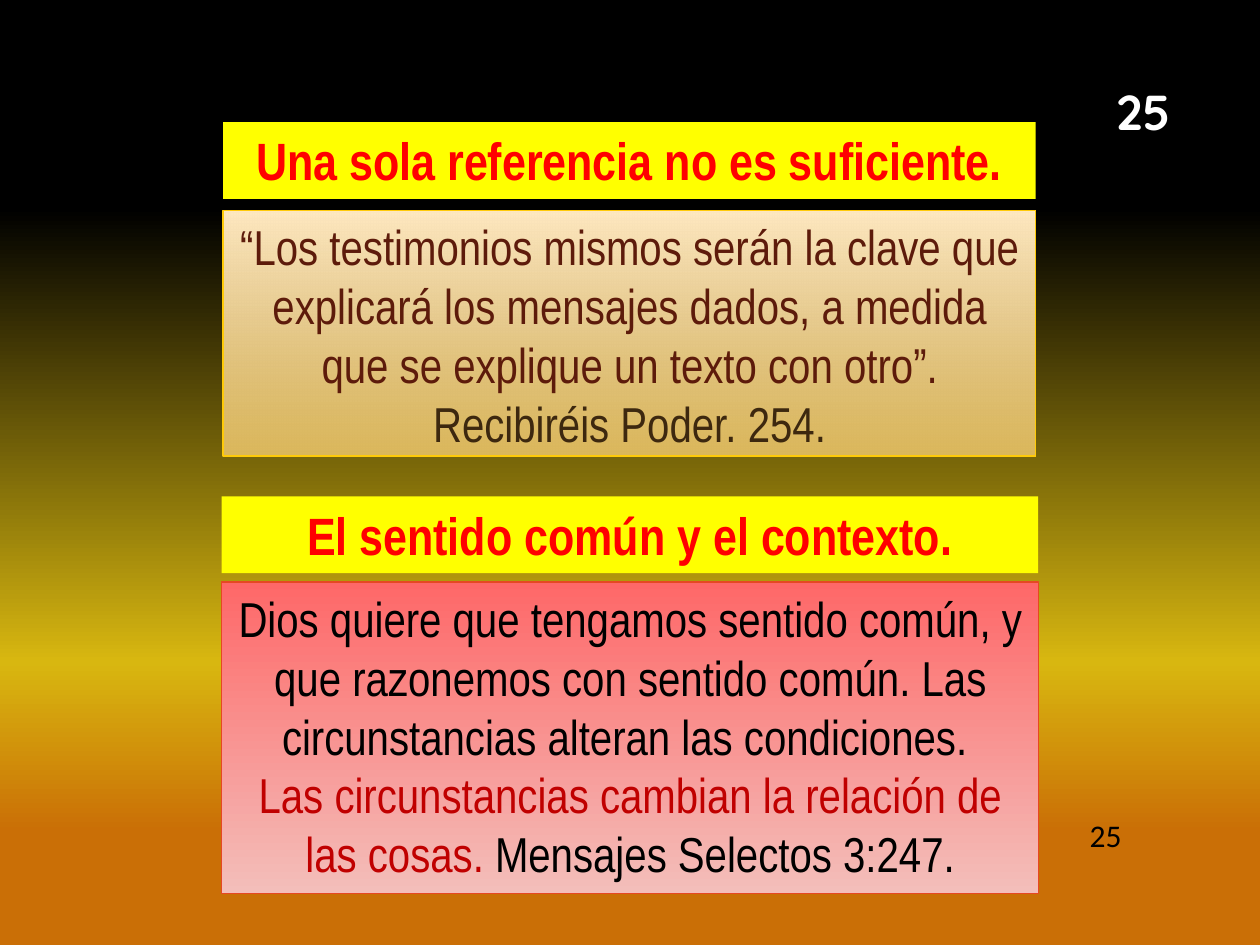
from pptx import Presentation
from pptx.dml.color import RGBColor
from pptx.enum.shapes import MSO_SHAPE
from pptx.enum.text import MSO_ANCHOR, PP_ALIGN
from pptx.oxml.ns import qn
from pptx.util import Inches, Pt
from lxml.etree import SubElement

COLORS = {
    "black": "000000", "white": "FFFFFF", "yellow": "FFFF00", "red": "FF0000",
    "dark_red": "C00000", "brown": "5D1B0B", "umber": "3D280F",
    "gold": "D8B710", "orange": "CA6F06", "cream": "FFE9C0", "sand": "FFD579",
    "sand_line": "FFCA08", "coral": "FE6868", "rose": "F3BEBA", "coral_line": "E64823",
}
NARROW = "Arial Narrow"
HEADING_ROWS = 8.13

presentation = Presentation()
presentation.slide_width, presentation.slide_height = Inches(10), Inches(7.5)
# Grid of 100 columns by 100 rows
COLUMN = presentation.slide_width / 100
ROW = presentation.slide_height / 100


def rgb(name):
    return RGBColor.from_string(COLORS[name])


def add_color(parent, name, alpha=100):
    color = SubElement(parent, qn("a:srgbClr"), val=COLORS[name])
    if alpha < 100:
        SubElement(color, qn("a:alpha"), val=str(alpha * 1000))


def fill_gradient(fill, owner, stops):
    """Fill from top to bottom; each stop is position, colour and optional opacity."""
    fill.gradient()
    fill.gradient_angle = 270
    stop_list = next(owner.iter(qn("a:gsLst")))
    for old_stop in list(stop_list):
        stop_list.remove(old_stop)
    for position, *color in stops:
        add_color(SubElement(stop_list, qn("a:gs"), pos=str(position * 1000)), *color)


def add_box(slide, box, fill=None, line=None):
    left, top, width, height = box
    shape = slide.shapes.add_shape(
        MSO_SHAPE.RECTANGLE, round(left * COLUMN), round(top * ROW),
        round(width * COLUMN), round(height * ROW))
    shape.shadow.inherit = False
    if isinstance(fill, list):
        fill_gradient(shape.fill, shape.element, fill)
    elif fill:
        shape.fill.solid()
        shape.fill.fore_color.rgb = rgb(fill)
    else:
        shape.fill.background()
    if line:
        shape.line.color.rgb = rgb(line)
        shape.line.width = Pt(0.75)
    else:
        shape.line.fill.background()
    return shape


def write(shape, paragraphs, size, font=NARROW, bold=False, outline=None,
          align=PP_ALIGN.CENTER, anchor=MSO_ANCHOR.TOP):
    """Each paragraph is a list of (text, colour); outline is (width, colour or None)."""
    frame = shape.text_frame
    frame.word_wrap = True
    frame.vertical_anchor = anchor
    for index, runs in enumerate(paragraphs):
        paragraph = frame.add_paragraph() if index else frame.paragraphs[0]
        paragraph.alignment = align
        for text, color in runs:
            run = paragraph.add_run()
            run.text = text
            run.font.size, run.font.name, run.font.bold = Pt(size), font, bold
            run.font.color.rgb = rgb(color)
            if outline:
                width, outline_color = outline
                properties = run.font._element
                line = SubElement(properties, qn("a:ln"), w=str(Pt(width)))
                add_color(SubElement(line, qn("a:solidFill")), outline_color or color)
                properties.insert(0, line)


def add_section(slide, box, gap, heading, paragraphs, fill, line):
    """A yellow heading bar with a quotation panel under it."""
    left, top, width, height = box
    bar = add_box(slide, (left, top, width, HEADING_ROWS), "yellow")
    write(bar, [[(heading, "red")]], 30, bold=True, outline=(0.25, "dark_red"))
    offset = HEADING_ROWS + gap
    panel = add_box(slide, (left, top + offset, width, height - offset), fill, line)
    write(panel, paragraphs, 28, outline=(1.5, None))


def add_numbers(slide, number):
    """The small number at the foot and the large one in the top corner."""
    write(add_box(slide, (85.4, 85.6, 4.6, 5.47)), [[(number, "black")]], 18,
          font="Calibri", align=PP_ALIGN.RIGHT, anchor=MSO_ANCHOR.MIDDLE)
    write(add_box(slide, (87.3, 4.27, 6.9, 11.2), "black"), [[(number, "white")]], 28,
          font="Quicksand", bold=True, anchor=MSO_ANCHOR.BOTTOM)


def main():
    slide = presentation.slides.add_slide(presentation.slide_layouts[6])
    fill_gradient(slide.background.fill, slide.element,
                  [(22, "black"), (70, "gold"), (88, "orange")])
    add_numbers(slide, "25")
    add_section(
        slide, (17.7, 12.93, 64.5, 35.33), 1.2, "Una sola referencia no es suficiente.",
        [[("“Los testimonios mismos serán la clave que explicará los mensajes dados, "
           "a medida que se explique un texto con otro”. ", "brown"),
          ("Recibiréis Poder. 254.", "umber")]],
        [(0, "cream"), (100, "sand", 74)], "sand_line")
    add_section(
        slide, (17.6, 52.53, 64.8, 42), 0.94, "El sentido común y el contexto.",
        [[("Dios quiere que tengamos sentido común, y que razonemos con sentido común. "
           "Las circunstancias alteran las condiciones. ", "black")],
         [("Las circunstancias cambian la relación de las cosas. ", "dark_red"),
          ("Mensajes Selectos 3:247.", "black")]],
        [(0, "coral"), (100, "rose")], "coral_line")
    presentation.save("out.pptx")


if __name__ == "__main__":
    main()
